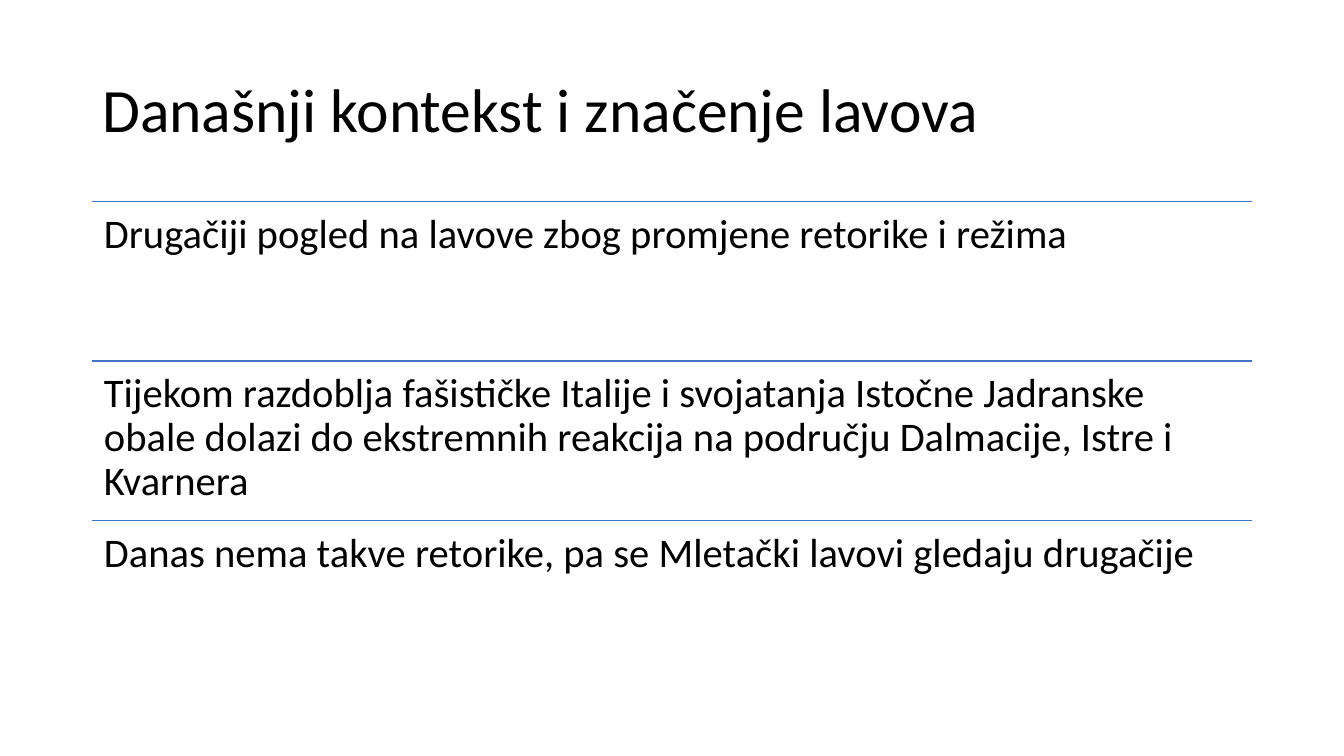
import pptx
import pptx.dml.color
import pptx.enum.shapes
import pptx.enum.text
import pptx.util
from lxml import etree
from pptx.oxml.ns import qn

TITLE = "Današnji kontekst i značenje lavova"
POINTS = [
    "Drugačiji pogled na lavove zbog promjene retorike i režima",
    "Tijekom razdoblja fašističke Italije i svojatanja Istočne Jadranske obale "
    "dolazi do ekstremnih reakcija na području Dalmacije, Istre i Kvarnera",
    "Danas nema takve retorike, pa se Mletački lavovi gledaju drugačije",
]
COLORS = {"text": "000000", "rule": "4472C4", "background": "FFFFFF"}
FONT = "Calibri"

EMU_PER_PX = 9525
SLIDE_WIDTH, SLIDE_HEIGHT = 1280, 720
LEFT, WIDTH = 88, 1104
TITLE_TOP, TITLE_HEIGHT = 38, 139
ROWS_TOP, ROW_HEIGHT = 192, 152
ROW_INSET = 11


def px(length):
    return pptx.util.Emu(length * EMU_PER_PX)


def color(name):
    return pptx.dml.color.RGBColor.from_string(COLORS[name])


def add_text(page, text, top, height, size):
    box = page.shapes.add_textbox(px(LEFT), px(top), px(WIDTH), px(height))
    frame = box.text_frame
    frame.word_wrap = True
    frame.text = text
    para = frame.paragraphs[0]
    para.line_spacing = 0.9
    span = para.runs[0]
    span.font.name = FONT
    span.font.size = pptx.util.Pt(size)
    span.font.color.rgb = color("text")
    return frame


def add_rule(page, top):
    rule = page.shapes.add_connector(
        pptx.enum.shapes.MSO_CONNECTOR.STRAIGHT,
        px(LEFT), px(top), px(LEFT + WIDTH), px(top))
    rule.line.color.rgb = color("rule")
    rule.line.width = pptx.util.Pt(1)
    etree.SubElement(rule._element.spPr, qn("a:effectLst"))


def main():
    deck = pptx.Presentation()
    deck.slide_width, deck.slide_height = px(SLIDE_WIDTH), px(SLIDE_HEIGHT)
    page = deck.slides.add_slide(deck.slide_layouts[6])
    page.background.fill.solid()
    page.background.fill.fore_color.rgb = color("background")

    title = add_text(page, TITLE, TITLE_TOP, TITLE_HEIGHT, 44)
    title.vertical_anchor = pptx.enum.text.MSO_ANCHOR.MIDDLE

    for row, point in enumerate(POINTS):
        top = ROWS_TOP + row * ROW_HEIGHT
        add_rule(page, top)
        frame = add_text(page, point, top, ROW_HEIGHT, 29)
        frame.margin_left = frame.margin_right = px(ROW_INSET)
        frame.margin_top = frame.margin_bottom = px(ROW_INSET)

    deck.save("out.pptx")


if __name__ == "__main__":
    main()
